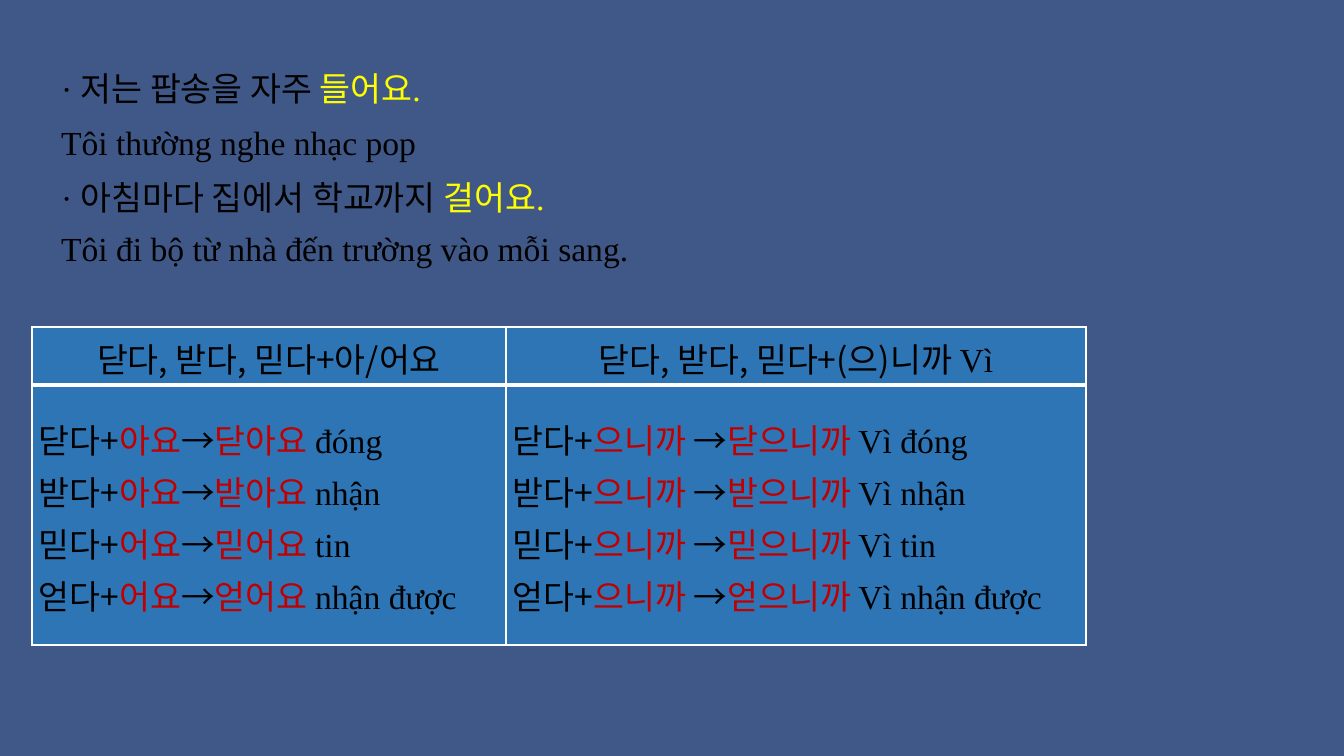
from dataclasses import dataclass
from typing import NamedTuple

from lxml.etree import SubElement
from pptx import Presentation
from pptx.dml.color import RGBColor
from pptx.enum.text import MSO_ANCHOR as Anchor, MSO_AUTO_SIZE as AutoSize, PP_ALIGN as Align
from pptx.oxml.ns import qn
from pptx.util import Emu, Pt

EMU_PER_PX = 914400 / 100.8


@dataclass(frozen=True)
class Theme:
    background: str = "405888"
    cell: str = "2E75B6"
    border: str = "FFFFFF"
    text: str = "000000"
    highlight: str = "FFFF00"
    ending: str = "C00000"
    latin: str = "Times New Roman"
    korean: str = "Noto Sans CJK KR"
    size: int = 24
    line_spacing: float = 1.07
    thin: int = 1
    thick: int = 3


THEME = Theme()


class Span(NamedTuple):
    text: str
    color: str = THEME.text
    font: str = THEME.korean


class Example(NamedTuple):
    sentence: str
    verb: str
    meaning: str


class Conjugation(NamedTuple):
    verb: str
    ending: str
    meaning: str


class Column(NamedTuple):
    width: int
    heading: list[Span]
    arrow: str
    rows: list[Conjugation]


EXAMPLES = [
    Example("· 저는 팝송을 자주 ", "들어요. ", "Tôi thường nghe nhạc pop"),
    Example("· 아침마다 집에서 학교까지 ", "걸어요.", "Tôi đi bộ từ nhà đến trường vào mỗi sang."),
]
VERBS = {"닫다": "đóng", "받다": "nhận", "믿다": "tin", "얻다": "nhận được"}
POLITE_ENDINGS = ["아요", "아요", "어요", "어요"]
COLUMNS = [
    Column(474, [Span("닫다, 받다, 믿다+아/어요")], "→",
           [Conjugation(verb, ending, meaning)
            for (verb, meaning), ending in zip(VERBS.items(), POLITE_ENDINGS)]),
    Column(580, [Span("닫다, 받다, 믿다+(으)니까 "), Span("Vì", font=THEME.latin)], " →",
           [Conjugation(verb, "으니까", f"Vì {meaning}") for verb, meaning in VERBS.items()]),
]
ROW_HEIGHTS = [58, 260]


def px(length: int) -> Emu:
    return Emu(round(length * EMU_PER_PX))


def rgb(color: str) -> RGBColor:
    return RGBColor.from_string(color)


def write_paragraph(paragraph, spans: list[Span], align: Align) -> None:
    paragraph.alignment = align
    paragraph.line_spacing = THEME.line_spacing
    paragraph.space_before = Pt(0)
    paragraph.font.size = Pt(THEME.size)
    for span in spans:
        run = paragraph.add_run()
        run.text = span.text
        run.font.name = span.font
        run.font.color.rgb = rgb(span.color)
        east_asian = SubElement(run.font._element, qn("a:ea"))
        east_asian.set("typeface", THEME.korean)


def write_paragraphs(text_frame, lines: list[list[Span]], align: Align) -> list:
    for index, spans in enumerate(lines):
        paragraph = text_frame.paragraphs[0] if index == 0 else text_frame.add_paragraph()
        write_paragraph(paragraph, spans, align)
    return list(text_frame.paragraphs)


def remove_bullet(paragraph) -> None:
    properties = paragraph._p.get_or_add_pPr()
    properties.set("marL", "0")
    properties.set("indent", "0")
    bullet = properties.makeelement(qn("a:buNone"))
    properties.find(qn("a:defRPr")).addprevious(bullet)


def add_examples(body) -> None:
    body.left, body.top, body.width, body.height = map(px, (51, 60, 672, 216))
    text_frame = body.text_frame
    text_frame.word_wrap = True
    text_frame.auto_size = AutoSize.NONE
    text_frame.vertical_anchor = Anchor.TOP
    lines = []
    for example in EXAMPLES:
        lines.append([Span(example.sentence, font=THEME.latin),
                      Span(example.verb, THEME.highlight, THEME.latin)])
        lines.append([Span(example.meaning, font=THEME.latin)])
    paragraphs = write_paragraphs(text_frame, lines, Align.JUSTIFY)
    for paragraph in paragraphs:
        paragraph.space_after = Pt(8)
        remove_bullet(paragraph)
    paragraphs[-1].alignment = Align.LEFT
    paragraphs[-1].line_spacing = 1.0
    paragraphs[-1].space_after = Pt(0)


def conjugation_spans(row: Conjugation, arrow: str) -> list[Span]:
    stem = row.verb[0]
    return [
        Span(f"{row.verb}+"),
        Span(row.ending, THEME.ending),
        Span(arrow),
        Span(f"{stem}{row.ending} ", THEME.ending),
        Span(row.meaning, font=THEME.latin),
    ]


def set_borders(cell, thick_side: str) -> None:
    properties = cell._tc.get_or_add_tcPr()
    for index, side in enumerate(("lnL", "lnR", "lnT", "lnB")):
        width = THEME.thick if side == thick_side else THEME.thin
        line = properties.makeelement(qn(f"a:{side}"), {"w": str(Pt(width))})
        color = SubElement(SubElement(line, qn("a:solidFill")), qn("a:srgbClr"))
        color.set("val", THEME.border)
        properties.insert(index, line)


def fill_cell(cell, lines: list[list[Span]], align: Align, thick_side: str) -> None:
    cell.fill.solid()
    cell.fill.fore_color.rgb = rgb(THEME.cell)
    cell.vertical_anchor = Anchor.MIDDLE
    cell.margin_left = cell.margin_right = px(7)
    cell.margin_top = cell.margin_bottom = 0
    write_paragraphs(cell.text_frame, lines, align)
    set_borders(cell, thick_side)


def add_conjugation_table(slide) -> None:
    width = sum(column.width for column in COLUMNS)
    frame = slide.shapes.add_table(len(ROW_HEIGHTS), len(COLUMNS), px(32), px(327),
                                   px(width), px(sum(ROW_HEIGHTS)))
    table = frame.table
    for row, height in zip(table.rows, ROW_HEIGHTS):
        row.height = px(height)
    for index, column in enumerate(COLUMNS):
        table.columns[index].width = px(column.width)
        fill_cell(table.cell(0, index), [column.heading], Align.CENTER, "lnB")
        lines = [conjugation_spans(row, column.arrow) for row in column.rows]
        fill_cell(table.cell(1, index), lines, Align.LEFT, "lnT")


def main() -> None:
    presentation = Presentation()
    presentation.slide_width, presentation.slide_height = px(1344), px(756)
    slide = presentation.slides.add_slide(presentation.slide_layouts[1])
    slide.background.fill.solid()
    slide.background.fill.fore_color.rgb = rgb(THEME.background)
    title = slide.shapes.title
    title._element.getparent().remove(title._element)
    add_examples(slide.placeholders[1])
    add_conjugation_table(slide)
    presentation.save("out.pptx")


if __name__ == "__main__":
    main()
